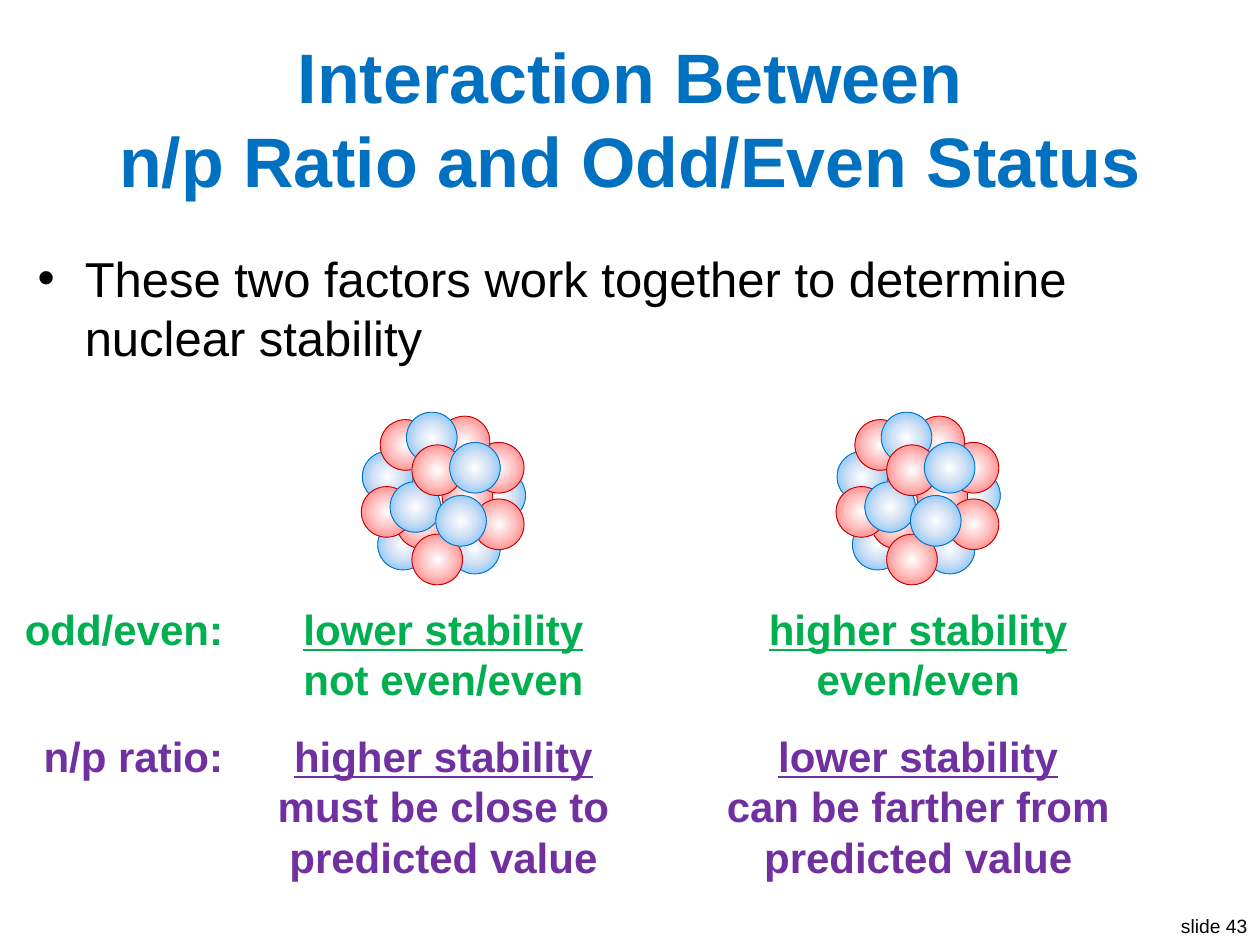
"""Build the slide on n/p ratio and odd/even status in nuclear stability."""
from pptx import Presentation
from pptx.dml.color import RGBColor
from pptx.enum.shapes import MSO_SHAPE
from pptx.enum.text import MSO_ANCHOR, MSO_AUTO_SIZE, PP_ALIGN
from pptx.oxml import parse_xml
from pptx.oxml.ns import nsdecls
from pptx.util import Cm, Pt

THEME = {
    "font": "Arial",
    "title": ("0070C0", 40, True),
    "body": ("000000", 28, False),
    "footer": ("000000", 11, False),
    "odd_even": ("00B050", 24, True),
    "ratio": ("7030A0", 24, True),
    "neutron": ("D2E1F4", "59B8FF", "0070C0"),
    "proton": ("FFC5C5", "FF6565", "C00000"),
}

TITLE = "Interaction Between\nn/p Ratio and Odd/Even Status"
BODY = "These two factors work together to determine nuclear stability"
FOOTER = "slide 43"

ROWS = [
    ("odd_even", 12.04, "odd/even:", [
        ["lower stability", "not even/even"],
        ["higher stability", "even/even"]]),
    ("ratio", 14.6, "n/p ratio:", [
        ["higher stability", "must be close to", "predicted value"],
        ["lower stability", "can be farther from", "predicted value"]]),
]
LABEL_RIGHT, COLUMN_WIDTH = 4.75, 8.3
COLUMN_CENTERS = [8.94, 18.51]

NUCLEUS_TOP, NUCLEUS_WIDTH, BALL = 8.31, 3.31, 1.02
NUCLEONS = [
    ("neutron", 0.58, 0.79), ("neutron", 2.29, 1.17), ("neutron", 1.78, 2.24),
    ("neutron", 0.33, 2.16), ("neutron", 0.02, 0.79), ("proton", 1.63, 1.19),
    ("proton", 0.71, 1.73), ("proton", 2.26, 0.61), ("proton", 2.26, 1.75),
    ("proton", 1.02, 2.46), ("proton", 0, 1.5), ("proton", 0.38, 0.15),
    ("neutron", 0.58, 1.4), ("proton", 1.57, 0.08), ("neutron", 0.91, 0),
    ("proton", 1.02, 0.66), ("neutron", 1.78, 0.61), ("neutron", 1.5, 1.68),
]


def add_text(s, box, lines, style, align, wrap=False):
    color, size, bold = THEME[style]
    tf = s.shapes.add_textbox(*map(Cm, box)).text_frame
    tf.word_wrap = wrap
    tf.auto_size = MSO_AUTO_SIZE.NONE if wrap else MSO_AUTO_SIZE.SHAPE_TO_FIT_TEXT
    for i, line in enumerate(lines):
        p = tf.add_paragraph() if i else tf.paragraphs[0]
        p.text = line
        p.alignment = align
        for r in p.runs:
            r.font.name, r.font.size, r.font.bold = THEME["font"], Pt(size), bold
            r.font.color.rgb = RGBColor.from_string(color)
    return tf


def add_bullet(p, indent):
    pPr = p._p.get_or_add_pPr()
    pPr.set("marL", str(Cm(indent)))
    pPr.set("indent", str(-Cm(indent)))
    pPr.append(parse_xml(f'<a:buFont {nsdecls("a")} typeface="Arial"/>'))
    pPr.append(parse_xml(f'<a:buChar {nsdecls("a")} char="•"/>'))


def radial_fill(middle, edge):
    stops = "".join(
        f'<a:gs pos="{pos * 1000}"><a:srgbClr val="{color}"/></a:gs>'
        for pos, color in ((0, "FFFFFF"), (42, middle), (100, edge)))
    return parse_xml(
        f'<a:gradFill {nsdecls("a")}><a:gsLst>{stops}</a:gsLst><a:path path="circle">'
        '<a:fillToRect l="50000" t="50000" r="50000" b="50000"/></a:path></a:gradFill>')


def add_nucleus(s, left):
    group = s.shapes.add_group_shape()
    for kind, x, y in NUCLEONS:
        middle, edge, outline = THEME[kind]
        sp = group.shapes.add_shape(MSO_SHAPE.OVAL, Cm(left + x), Cm(NUCLEUS_TOP + y),
                                    Cm(BALL), Cm(BALL))
        sp.shadow.inherit = False
        sp.line.color.rgb = RGBColor.from_string(outline)
        sp.line.width = Pt(0.5)
        sp._element.spPr.insert(2, radial_fill(middle, edge))


def main():
    prs = Presentation()
    prs.slide_width, prs.slide_height = Cm(25.4), Cm(19.05)
    s = prs.slides.add_slide(prs.slide_layouts[6])

    add_text(s, (23.5, 18.31, 1.9, 0.74), [FOOTER], "footer", PP_ALIGN.RIGHT)
    tf = add_text(s, (0.51, 0.76, 24.38, 3.23), [TITLE], "title", PP_ALIGN.CENTER, True)
    tf.vertical_anchor = MSO_ANCHOR.MIDDLE
    tf = add_text(s, (0.51, 4.88, 24.38, 3.33), [BODY], "body", PP_ALIGN.LEFT, True)
    tf.paragraphs[0].space_before = Pt(12)
    add_bullet(tf.paragraphs[0], 0.95)

    for center in COLUMN_CENTERS:
        add_nucleus(s, center - NUCLEUS_WIDTH / 2)

    for style, top, label, cells in ROWS:
        add_text(s, (LABEL_RIGHT - 4.5, top, 4.5, 1.27), [label], style, PP_ALIGN.RIGHT)
        for center, lines in zip(COLUMN_CENTERS, cells):
            box = (center - COLUMN_WIDTH / 2, top, COLUMN_WIDTH, 0.25 + 1.03 * len(lines))
            tf = add_text(s, box, lines, style, PP_ALIGN.CENTER)
            tf.paragraphs[0].runs[0].font.underline = True

    prs.save("out.pptx")


if __name__ == "__main__":
    main()
